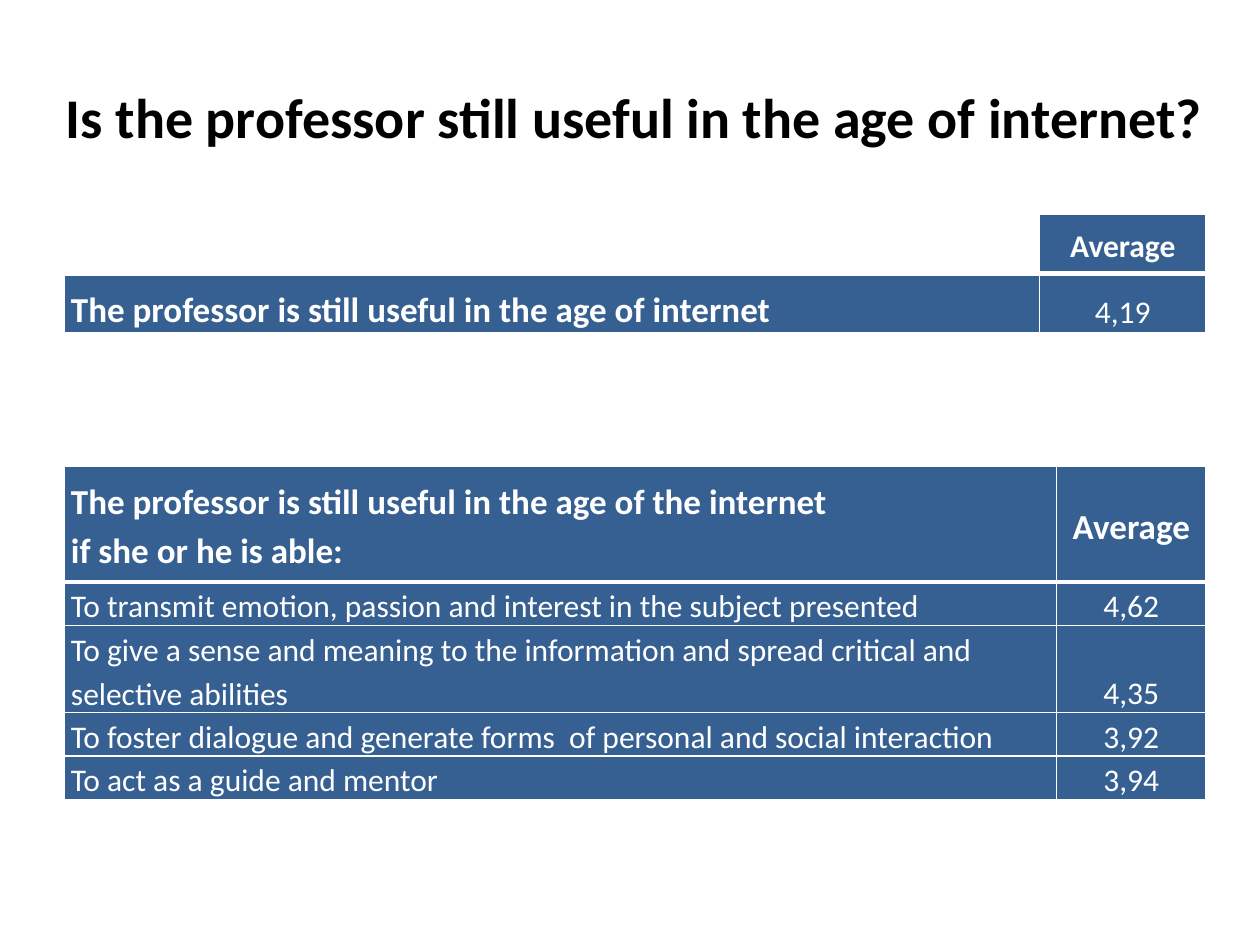
from dataclasses import dataclass

from lxml import etree
from pptx import Presentation
from pptx import util as u
from pptx.dml.color import RGBColor
from pptx.enum import text
from pptx.oxml import ns


@dataclass(frozen=True)
class Theme:
    font: str = "Calibri"
    black: str = "000000"
    white: str = "FFFFFF"
    blue: str = "376092"
    title_size: int = 32
    heading_size: int = 20
    body_size: int = 18
    thin_line: int = 1
    thick_line: int = 3
    line_spacing: float = 1.15


@dataclass(frozen=True)
class CellText:
    words: str
    size: int
    bold: bool = False
    centred: bool = False
    middle: bool = False


@dataclass(frozen=True)
class ScoreTable:
    top: float
    column_widths: tuple[float, float]
    row_heights: tuple[float, ...]
    rows: tuple[tuple[CellText | None, CellText], ...]


THEME = Theme()
TABLE_LEFT = 1.3


def label(words: str) -> CellText:
    return CellText(words, THEME.body_size)


def score(words: str) -> CellText:
    return CellText(words, THEME.body_size, centred=True)


def heading(words: str, size: int = THEME.heading_size, **options) -> CellText:
    return CellText(words, size, bold=True, **options)


OVERALL = ScoreTable(
    top=4.32,
    column_widths=(19.66, 3.35),
    row_heights=(1.19, 1.19),
    rows=(
        (None, heading("Average", THEME.body_size, centred=True, middle=True)),
        (heading("The professor is still useful in the age of internet"), score("4,19")),
    ),
)

ABILITIES = ScoreTable(
    top=9.4,
    column_widths=(20, 3.01),
    row_heights=(2.33, 0.88, 1.75, 0.88, 0.88),
    rows=(
        (
            heading("The professor is still useful in the age of the internet\n"
                    "if she or he is able:", middle=True),
            heading("Average", centred=True, middle=True),
        ),
        (label("To transmit emotion, passion and interest in the subject presented"), score("4,62")),
        (label("To give a sense and meaning to the information and spread critical "
               "and selective abilities"), score("4,35")),
        (label("To foster dialogue and generate forms  of personal and social interaction"),
         score("3,92")),
        (label("To act as a guide and mentor"), score("3,94")),
    ),
)


def apply(target, values: dict) -> None:
    for name, value in values.items():
        setattr(target, name, value)


def style_paragraph(paragraph, size: int, bold: bool, colour: str, centred: bool) -> None:
    paragraph.alignment = text.PP_ALIGN.CENTER if centred else text.PP_ALIGN.LEFT
    for run in paragraph.runs:
        apply(run.font, {"name": THEME.font, "size": u.Pt(size), "bold": bold})
        run.font.color.rgb = RGBColor.from_string(colour)


def add_borders(cell, top: int, bottom: int) -> None:
    properties = cell._tc.get_or_add_tcPr()
    widths = {"L": THEME.thin_line, "R": THEME.thin_line, "T": top, "B": bottom}
    for side, width in widths.items():
        line = etree.SubElement(properties, ns.qn(f"a:ln{side}"), w=str(u.Pt(width)))
        fill = etree.SubElement(line, ns.qn("a:solidFill"))
        etree.SubElement(fill, ns.qn("a:srgbClr"), val=THEME.white)


def fill_cell(cell, content: CellText | None) -> None:
    apply(cell, {"margin_left": u.Cm(0.13), "margin_right": u.Cm(0.13),
                 "margin_top": 0, "margin_bottom": 0})
    cell.fill.solid()
    cell.fill.fore_color.rgb = RGBColor.from_string(THEME.blue if content else THEME.white)
    if content is None:
        return
    cell.vertical_anchor = text.MSO_ANCHOR.MIDDLE if content.middle else text.MSO_ANCHOR.BOTTOM
    cell.text_frame.text = content.words
    for paragraph in cell.text_frame.paragraphs:
        paragraph.line_spacing = THEME.line_spacing
        style_paragraph(paragraph, content.size, content.bold, THEME.white, content.centred)


def draw_table(slide, data: ScoreTable) -> None:
    table = slide.shapes.add_table(
        len(data.rows), len(data.column_widths), u.Cm(TABLE_LEFT), u.Cm(data.top),
        u.Cm(sum(data.column_widths)), u.Cm(sum(data.row_heights))).table
    apply(table, {"first_row": False, "horz_banding": False})
    for column, width in zip(table.columns, data.column_widths):
        column.width = u.Cm(width)
    for row, height in zip(table.rows, data.row_heights):
        row.height = u.Cm(height)
    # A thick line separates the header row from the scores
    for row_index, contents in enumerate(data.rows):
        top = THEME.thick_line if row_index == 1 else THEME.thin_line
        bottom = THEME.thick_line if row_index == 0 else THEME.thin_line
        for column_index, content in enumerate(contents):
            cell = table.cell(row_index, column_index)
            add_borders(cell, top, bottom)
            fill_cell(cell, content)


def draw_title(slide, words: str) -> None:
    shape = slide.shapes.add_textbox(u.Cm(0.89), u.Cm(0.76), u.Cm(23.8), u.Cm(3.18))
    frame = shape.text_frame
    apply(frame, {"word_wrap": True, "vertical_anchor": text.MSO_ANCHOR.MIDDLE, "text": words})
    style_paragraph(frame.paragraphs[0], THEME.title_size, True, THEME.black, True)


def main() -> None:
    presentation = Presentation()
    apply(presentation, {"slide_width": u.Cm(25.4), "slide_height": u.Cm(19.05)})
    slide = presentation.slides.add_slide(presentation.slide_layouts[6])

    # Title
    draw_title(slide, "Is the professor still useful in the age of internet?")

    # Score tables
    for data in (OVERALL, ABILITIES):
        draw_table(slide, data)

    presentation.save("out.pptx")


if __name__ == "__main__":
    main()
